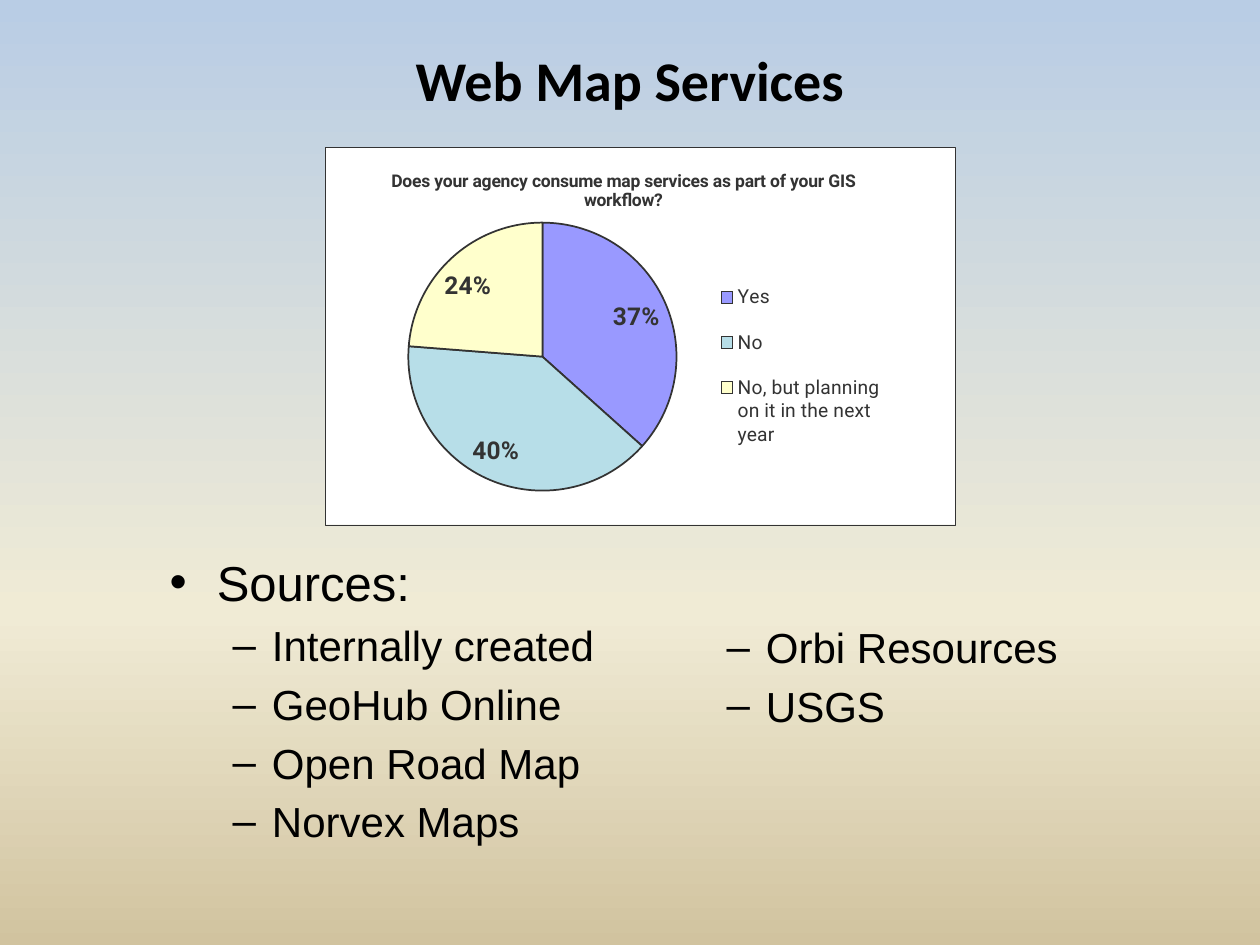
import copy
from dataclasses import dataclass

import pptx
import pptx.chart.data
import pptx.dml.color
import pptx.enum.chart
import pptx.enum.text
import pptx.oxml
import pptx.oxml.ns
import pptx.util

EMU_PER_PX = 914400 / 126
INK = "333333"
BLACK = "000000"


@dataclass
class Box:
    left: int
    top: int
    width: int
    height: int

    def emu(self) -> list[int]:
        return [round(side * EMU_PER_PX)
                for side in (self.left, self.top, self.width, self.height)]


@dataclass
class Item:
    text: str
    level: int = 1
    size: int = 24


@dataclass
class Slice:
    answer: str
    percent: int
    color: str
    label_shift: tuple[int, int]


TITLE_BOX = Box(63, 38, 1134, 88)
CHART_BOX = Box(325, 147, 630, 378)
SOURCE_LISTS = {
    1: (Box(157, 546, 640, 357), [
        Item("Sources:", 0, 28), Item("Internally created"), Item("GeoHub Online"),
        Item("Open Road Map"), Item("Norvex Maps")]),
    2: (Box(651, 615, 514, 298), [Item("Orbi Resources"), Item("USGS")]),
}
SLICES = [
    Slice("Yes", 37, "9999FF", (2, -3)),
    Slice("No", 40, "B7DEE8", (-20, -7)),
    Slice("No, but planning on it in the next year", 24, "FFFFCC", (-12, 7)),
]
SKY_TO_SAND = [(0, "B9CDE5"), (0.65, "F0EBD5"), (1, "D1C39F")]


def rgb(color: str) -> pptx.dml.color.RGBColor:
    return pptx.dml.color.RGBColor.from_string(color)


def style(font, name: str, size: int, color: str, bold: bool = False) -> None:
    font.name, font.size, font.bold = name, pptx.util.Pt(size), bold
    font.color.rgb = rgb(color)


def place(shape, box: Box) -> None:
    shape.left, shape.top, shape.width, shape.height = box.emu()


def paint_background(slide) -> None:
    fill = slide.background.fill
    fill.gradient()
    fill.gradient_angle = 270
    stop_list = next(slide.element.iter(pptx.oxml.ns.qn("a:gsLst")))
    stop_list.append(copy.deepcopy(stop_list[-1]))
    for stop, (position, color) in zip(fill.gradient_stops, SKY_TO_SAND):
        stop.position = position
        stop.color.rgb = rgb(color)


def write_list(placeholder, box: Box, items: list[Item]) -> None:
    place(placeholder, box)
    frame = placeholder.text_frame
    frame.text = "\n".join(item.text for item in items)
    frame.auto_size = pptx.enum.text.MSO_AUTO_SIZE.NONE
    for paragraph, item in zip(frame.paragraphs, items):
        paragraph.level = item.level
        style(paragraph.runs[0].font, "Arial", item.size, BLACK)


def set_layout(chart, part: str, index: int, inner: bool = False, **sides: float) -> None:
    """Give a chart part a fixed place, in fractions of the chart."""
    element = chart.element.find(".//" + pptx.oxml.ns.qn(part))
    for previous in element.findall(pptx.oxml.ns.qn("c:layout")):
        element.remove(previous)
    target = '<c:layoutTarget val="inner"/>' if inner else ""
    modes = '<c:xMode val="edge"/><c:yMode val="edge"/>'
    values = "".join(f'<c:{side} val="{value}"/>' for side, value in sides.items())
    element.insert(index, pptx.oxml.parse_xml(
        f'<c:layout {pptx.oxml.ns.nsdecls("c")}><c:manualLayout>'
        f"{target}{modes}{values}</c:manualLayout></c:layout>"))


def shift_labels(chart) -> None:
    """Move each percentage by its own shift, keeping the common label format."""
    labels = next(chart.element.iter(pptx.oxml.ns.qn("c:dLbls")))
    common = [child for child in labels
              if child.tag != pptx.oxml.ns.qn("c:showLeaderLines")]
    for index, part in enumerate(SLICES):
        across, down = part.label_shift
        label = pptx.oxml.parse_xml(
            f'<c:dLbl {pptx.oxml.ns.nsdecls("c")}><c:idx val="{index}"/>'
            f'<c:layout><c:manualLayout><c:x val="{across / CHART_BOX.width:.3f}"/>'
            f'<c:y val="{down / CHART_BOX.height:.3f}"/></c:manualLayout></c:layout>'
            "</c:dLbl>")
        label.extend(copy.deepcopy(common))
        labels.insert(index, label)


def add_survey_pie(slide) -> None:
    survey = pptx.chart.data.CategoryChartData(number_format="0")
    survey.categories = [part.answer for part in SLICES]
    survey.add_series("Series 1", [part.percent for part in SLICES])
    chart = slide.shapes.add_chart(
        pptx.enum.chart.XL_CHART_TYPE.PIE, *CHART_BOX.emu(), survey).chart
    style(chart.font, "Roboto", 10, INK)

    # White panel with a thin border
    chart.element.find(pptx.oxml.ns.qn("c:txPr")).addprevious(pptx.oxml.parse_xml(
        f'<c:spPr {pptx.oxml.ns.nsdecls("c", "a")}>'
        '<a:solidFill><a:srgbClr val="FFFFFF"/></a:solidFill>'
        f'<a:ln w="3175"><a:solidFill><a:srgbClr val="{INK}"/></a:solidFill></a:ln>'
        "</c:spPr>"))

    # Question and legend
    question = chart.chart_title.text_frame
    question.text = "Does your agency consume map services as part of your GIS workflow?"
    style(question.paragraphs[0].runs[0].font, "Roboto", 10, INK, bold=True)
    chart.has_legend = True
    chart.legend.position = pptx.enum.chart.XL_LEGEND_POSITION.RIGHT
    chart.legend.include_in_layout = False
    style(chart.legend.font, "Roboto", 11, INK)

    # Slices and their percentages
    plot = chart.plots[0]
    plot.vary_by_categories = True
    pie = plot.series[0]
    for index, part in enumerate(SLICES):
        slice_format = pie.points[index].format
        slice_format.fill.solid()
        slice_format.fill.fore_color.rgb = rgb(part.color)
        slice_format.line.color.rgb = rgb(INK)
        slice_format.line.width = pptx.util.Pt(1)
    labels = pie.data_labels
    labels.show_percentage, labels.show_value = True, False
    labels.number_format, labels.number_format_is_linked = "0%", False
    labels.position = pptx.enum.chart.XL_LABEL_POSITION.INSIDE_END
    style(labels.font, "Roboto", 14, INK, bold=True)
    shift_labels(chart)

    set_layout(chart, "c:title", 1, x=0.1, y=0.05)
    set_layout(chart, "c:plotArea", 0, inner=True, x=0.13, y=0.2, w=0.43, h=0.71)
    set_layout(chart, "c:legend", 1, x=0.61, y=0.31, w=0.29, h=0.54)


def main() -> None:
    deck = pptx.Presentation()
    deck.slide_width, deck.slide_height = pptx.util.Inches(10), pptx.util.Inches(7.5)
    slide = deck.slides.add_slide(deck.slide_layouts.get_by_name("Two Content"))
    paint_background(slide)

    # Title
    title = slide.shapes.title
    place(title, TITLE_BOX)
    title.text_frame.text = "Web Map Services"
    heading = title.text_frame.paragraphs[0]
    heading.alignment = pptx.enum.text.PP_ALIGN.CENTER
    heading.line_spacing = 0.95
    style(heading.runs[0].font, "Calibri", 32, BLACK, bold=True)

    # Sources in two columns
    for number, (box, items) in SOURCE_LISTS.items():
        write_list(slide.placeholders[number], box, items)

    add_survey_pie(slide)
    deck.save("out.pptx")


if __name__ == "__main__":
    main()
